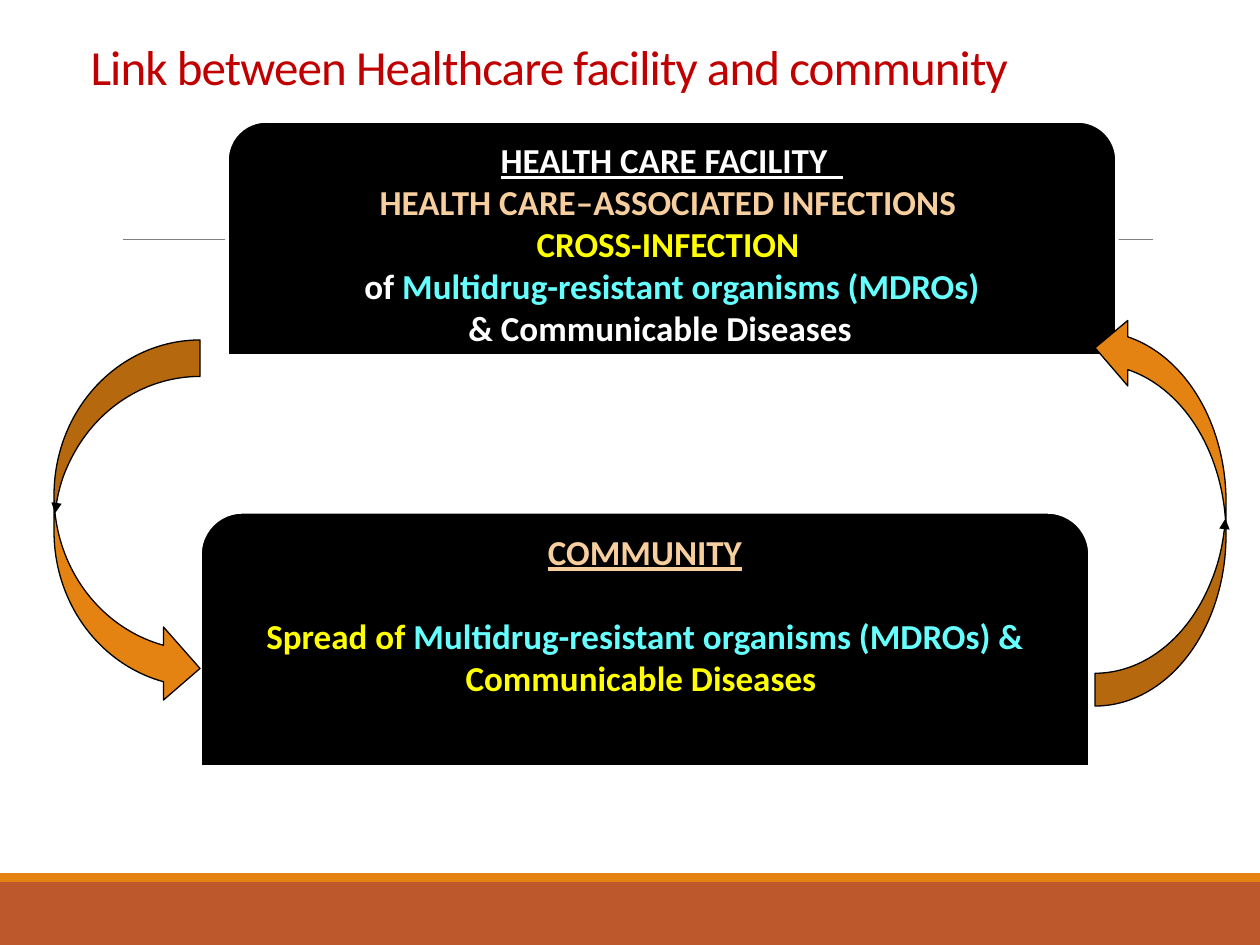
from lxml import etree
from pptx import Presentation, util as u
from pptx.dml.color import RGBColor
from pptx.enum import shapes, text
from pptx.oxml.ns import qn

PX = 914400 / 126
COLORS = {
    "white": "FFFFFF", "black": "000000", "red": "C00000", "rust": "BD582C",
    "orange": "E48312", "gray": "808080", "peach": "F7CE9D",
    "yellow": "FFFF00", "cyan": "66FFFF",
}
SHAPE = shapes.MSO_SHAPE


def rgb(name):
    return RGBColor.from_string(COLORS[name])


def add_shape(kind, box, fill, line=None, width=0):
    sp = s.shapes.add_shape(kind, *[int(v * PX) for v in box])
    sp.shadow.inherit = False
    sp.fill.solid()
    sp.fill.fore_color.rgb = rgb(fill)
    if line:
        sp.line.color.rgb = rgb(line)
        sp.line.width = u.Pt(width)
    else:
        sp.line.fill.background()
    return sp


prs = Presentation()
prs.slide_width, prs.slide_height = u.Inches(10), u.Inches(7.5)
s = prs.slides.add_slide(prs.slide_layouts[5])

add_shape(SHAPE.RECTANGLE, (0, 882, 1260, 63), "rust")
add_shape(SHAPE.RECTANGLE, (0, 873, 1260, 9), "orange")

rule = s.shapes.add_connector(
    shapes.MSO_CONNECTOR.STRAIGHT, *[int(v * PX) for v in (123, 239, 1153, 239)])
rule.line.color.rgb = rgb("gray")
rule.line.width = u.Pt(0.5)
etree.SubElement(rule._element.spPr, qn("a:effectLst"))

title = s.shapes.title
title.left, title.top, title.width, title.height = [
    int(v * PX) for v in (78, -55, 1134, 157)]
tf = title.text_frame
tf.word_wrap = True
tf.auto_size = text.MSO_AUTO_SIZE.NONE
tf.vertical_anchor = text.MSO_ANCHOR.BOTTOM
p = tf.paragraphs[0]
p.alignment = text.PP_ALIGN.LEFT
p.line_spacing = 0.85
r = p.add_run()
r.text = "Link between Healthcare facility and community"
r.font.name, r.font.size = "Calibri", u.Pt(28)
r.font.color.rgb = rgb("red")
r.font._element.set("spc", "-50")

panels = [
    ((227, 121, 890, 235), [
        (0, [("HEALTH CARE FACILITY  ", "white", True)]),
        (0, [("HEALTH CARE–ASSOCIATED INFECTIONS ", "peach", False)]),
        (0, [("CROSS-INFECTION ", "yellow", False)]),
        (0, [("of ", "white", False),
             ("Multidrug-resistant organisms (MDROs)", "cyan", False)]),
        (0, [("& Communicable Diseases   ", "white", False)]),
    ]),
    ((200, 512, 890, 255), [
        (0, [("COMMUNITY", "peach", True)]),
        (24, [("Spread of ", "yellow", False),
              ("Multidrug-resistant organisms (MDROs) & ", "cyan", False),
              ("Communicable Diseases ", "yellow", False)]),
    ]),
]
for box, paragraphs in panels:
    sp = add_shape(SHAPE.ROUND_2_SAME_RECTANGLE, box, "black", "white", 2)
    tf = sp.text_frame
    tf.word_wrap = True
    tf.vertical_anchor = text.MSO_ANCHOR.TOP
    for i, (gap, runs) in enumerate(paragraphs):
        p = tf.add_paragraph() if i else tf.paragraphs[0]
        p.alignment = text.PP_ALIGN.CENTER
        if gap:
            p.space_before = u.Pt(gap)
        for words, color, underline in runs:
            r = p.add_run()
            r.text = words
            r.font.name, r.font.size = "Calibri", u.Pt(20)
            r.font.bold, r.font.underline = True, underline
            r.font.color.rgb = rgb(color)

for box, turn in [((54, 340, 146, 365), 0), ((1095, 315, 131, 391), 180)]:
    sp = add_shape(SHAPE.CURVED_RIGHT_ARROW, box, "orange", "black", 0.75)
    sp.rotation = turn
    etree.SubElement(sp.line._get_or_add_ln(), qn("a:tailEnd"), type="triangle")

prs.save("out.pptx")
